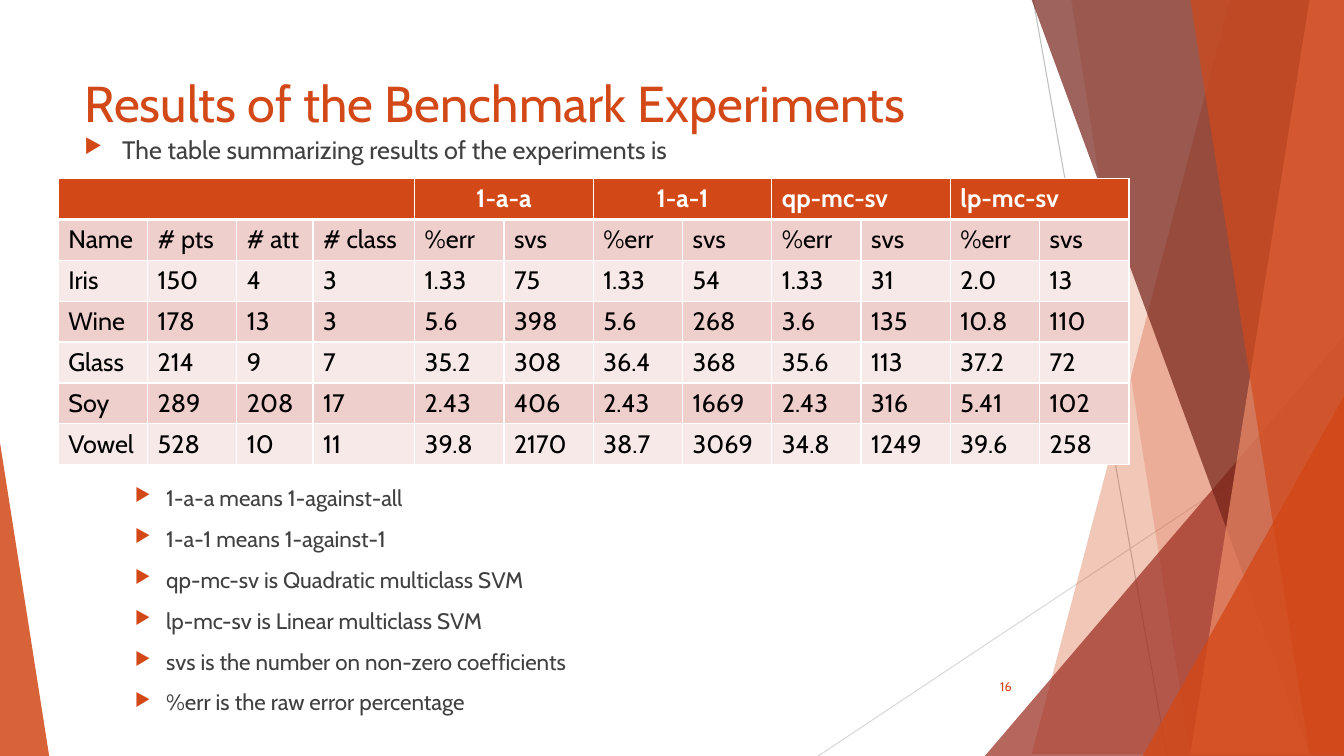
"""Build the slide with the benchmark results table."""
import pptx
import pptx.dml.color
import pptx.enum.shapes
import pptx.enum.text
import pptx.oxml
import pptx.oxml.ns
import pptx.util

Cm = pptx.util.Cm
Pt = pptx.util.Pt
RGBColor = pptx.dml.color.RGBColor
Align = pptx.enum.text.PP_ALIGN
Anchor = pptx.enum.text.MSO_ANCHOR
Shape = pptx.enum.shapes.MSO_SHAPE
qn = pptx.oxml.ns.qn

ORANGE = RGBColor(0xD3, 0x48, 0x17)
RUST = RGBColor(0x9B, 0x2D, 0x1F)
BROWN = RGBColor(0x74, 0x22, 0x17)
PEACH = RGBColor(0xEF, 0x8C, 0x6A)
SILVER = RGBColor(0xBF, 0xBF, 0xBF)
PALE = RGBColor(0xD9, 0xD9, 0xD9)
GREY = RGBColor(0x40, 0x40, 0x40)
BLACK = RGBColor(0, 0, 0)
WHITE = RGBColor(0xFF, 0xFF, 0xFF)
ROSE = RGBColor(0xEF, 0xCF, 0xCC)
BLUSH = RGBColor(0xF7, 0xE9, 0xE8)

WIDE, HIGH = 33.87, 19.05
NS = 'xmlns:a="http://schemas.openxmlformats.org/drawingml/2006/main"'


def write(para, text, size=18, color=BLACK, bold=False, align=Align.LEFT):
    run = para.add_run()
    run.text = text
    run.font.name = "Cabin"
    run.font.size = Pt(size)
    run.font.bold = bold
    run.font.color.rgb = color
    para.alignment = align


deck = pptx.Presentation()
deck.slide_width, deck.slide_height = Cm(WIDE), Cm(HIGH)
slide = deck.slides.add_slide(deck.slide_layouts[5])
shapes = slide.shapes

rays = [(26.04, 0, 29.41, HIGH, SILVER), (WIDE, 10.24, 20.62, HIGH, PALE)]
for *ends, color in rays:
    ray = shapes.add_connector(
        pptx.enum.shapes.MSO_CONNECTOR.STRAIGHT, *[Cm(end) for end in ends])
    ray.line.color.rgb = color
    ray.line.width = Pt(0.75)
    ray.element.spPr.append(pptx.oxml.parse_xml(f"<a:effectLst {NS}/>"))

# Bands give top and bottom x; peaks give a box and the tip.
facets = [
    ("band", (31.19, 25.5), ORANGE, 30),
    ("band", (26.67, 30.05), ORANGE, 20),
    ("peak", (24.82, 8.46, 9.05, 10.59, 1), RUST, 72),
    ("band", (25.93, 32.79), BROWN, 70),
    ("band", (33.1, 30.28), PEACH, 70),
    ("band", (30.38, 33.48), ORANGE, 65),
    ("peak", (28.8, 9.98, 5.07, 9.07, 1), ORANGE, 80),
    ("peak", (0, 11.15, 1.24, 7.9, 0), ORANGE, 85),
]
for kind, nums, color, alpha in facets:
    if kind == "band":
        top, base = nums
        pen = shapes.build_freeform(top, -0.02, scale=Cm(1))
        pen.add_line_segments([(WIDE, -0.02), (WIDE, HIGH), (base, HIGH)])
        facet = pen.convert_to_shape()
    else:
        *box, tip = nums
        facet = shapes.add_shape(
            Shape.ISOSCELES_TRIANGLE, *[Cm(side) for side in box])
        facet.adjustments[0] = tip
    facet.shadow.inherit = False
    facet.line.fill.background()
    facet.fill.solid()
    facet.fill.fore_color.rgb = color
    tint = facet.element.spPr.find(".//" + qn("a:srgbClr"))
    tint.append(pptx.oxml.parse_xml(f'<a:alpha {NS} val="{alpha * 1000}"/>'))

title = shapes.title
shapes.element.append(title.element)
title.left, title.top, title.width, title.height = Cm(1.88), Cm(1.7), Cm(23.88), Cm(3.66)
frame = title.text_frame
frame.word_wrap = True
frame.auto_size = pptx.enum.text.MSO_AUTO_SIZE.NONE
frame.vertical_anchor = Anchor.TOP
write(frame.paragraphs[0], "Results of the Benchmark Experiments", size=36, color=ORANGE)

body = shapes.add_textbox(Cm(1.88), Cm(3.25), Cm(23.88), Cm(15.01)).text_frame
body.word_wrap = True
points = [
    "The table summarizing results of the experiments is",
    "1-a-a means 1-against-all",
    "1-a-1 means 1-against-1",
    "qp-mc-sv is Quadratic multiclass SVM",
    "lp-mc-sv is Linear multiclass SVM",
    "svs is the number on non-zero coefficients",
    "%err is the raw error percentage",
]
for i, point in enumerate(points):
    para = body.add_paragraph() if i else body.paragraphs[0]
    write(para, point, size=16 if i else 18, color=GREY)
    para.level = 1 if i else 0
    para.space_before = Pt({0: 0, 1: 228.6}.get(i, 10))
    props = para._p.get_or_add_pPr()
    props.set("marL", str(Cm(2.06 if i else 0.95)))
    props.set("indent", str(-Cm(0.79 if i else 0.95)))
    for mark in (f'<a:buClr {NS}><a:srgbClr val="{ORANGE}"/></a:buClr>',
                 f'<a:buSzPct {NS} val="80000"/>',
                 f'<a:buChar {NS} char="▶"/>'):
        props.append(pptx.oxml.parse_xml(mark))

number = shapes.add_textbox(Cm(23.85), Cm(16.79), Cm(1.9), Cm(1.02)).text_frame
number.word_wrap = True
number.vertical_anchor = Anchor.MIDDLE
write(number.paragraphs[0], "16", size=9, color=ORANGE, align=Align.RIGHT)

heads = {4: "1-a-a", 6: "1-a-1", 8: "qp-mc-sv", 10: "lp-mc-sv"}
rows = [
    ["Name", "# pts", "# att", "# class"] + ["%err", "svs"] * 4,
    ["Iris", "150", "4", "3", "1.33", "75", "1.33", "54", "1.33", "31", "2.0", "13"],
    ["Wine", "178", "13", "3", "5.6", "398", "5.6", "268", "3.6", "135", "10.8", "110"],
    ["Glass", "214", "9", "7", "35.2", "308", "36.4", "368", "35.6", "113", "37.2", "72"],
    ["Soy", "289", "208", "17", "2.43", "406", "2.43", "1669", "2.43", "316", "5.41", "102"],
    ["Vowel", "528", "10", "11", "39.8", "2170", "38.7", "3069", "34.8", "1249", "39.6", "258"],
]
grid = [[heads.get(c, "") for c in range(12)]] + rows
table = shapes.add_table(7, 12, Cm(1.47), Cm(4.5), Cm(26.98), Cm(7.21)).table
for c, column in enumerate(table.columns):
    column.width = Cm({2: 1.92, 3: 2.56}.get(c, 2.25))
table.cell(0, 0).merge(table.cell(0, 3))
for c in heads:
    table.cell(0, c).merge(table.cell(0, c + 1))

for r, texts in enumerate(grid):
    table.rows[r].height = Cm(1.03)
    for c, text in enumerate(texts):
        cell = table.cell(r, c)
        cell.fill.solid()
        cell.fill.fore_color.rgb = (ROSE if r % 2 else BLUSH) if r else ORANGE
        if text:
            write(cell.text_frame.paragraphs[0], text, bold=r == 0,
                  color=BLACK if r else WHITE,
                  align=Align.CENTER if r == 0 and c < 8 else Align.LEFT)
        for i, side in enumerate("LRTB"):
            thick = (r, side) in [(0, "B"), (1, "T")]
            edge = (f'<a:ln{side} {NS} w="{Pt(3 if thick else 1)}"><a:solidFill>'
                    f'<a:srgbClr val="{WHITE}"/></a:solidFill></a:ln{side}>')
            cell._tc.get_or_add_tcPr().insert(i, pptx.oxml.parse_xml(edge))

deck.save("out.pptx")
